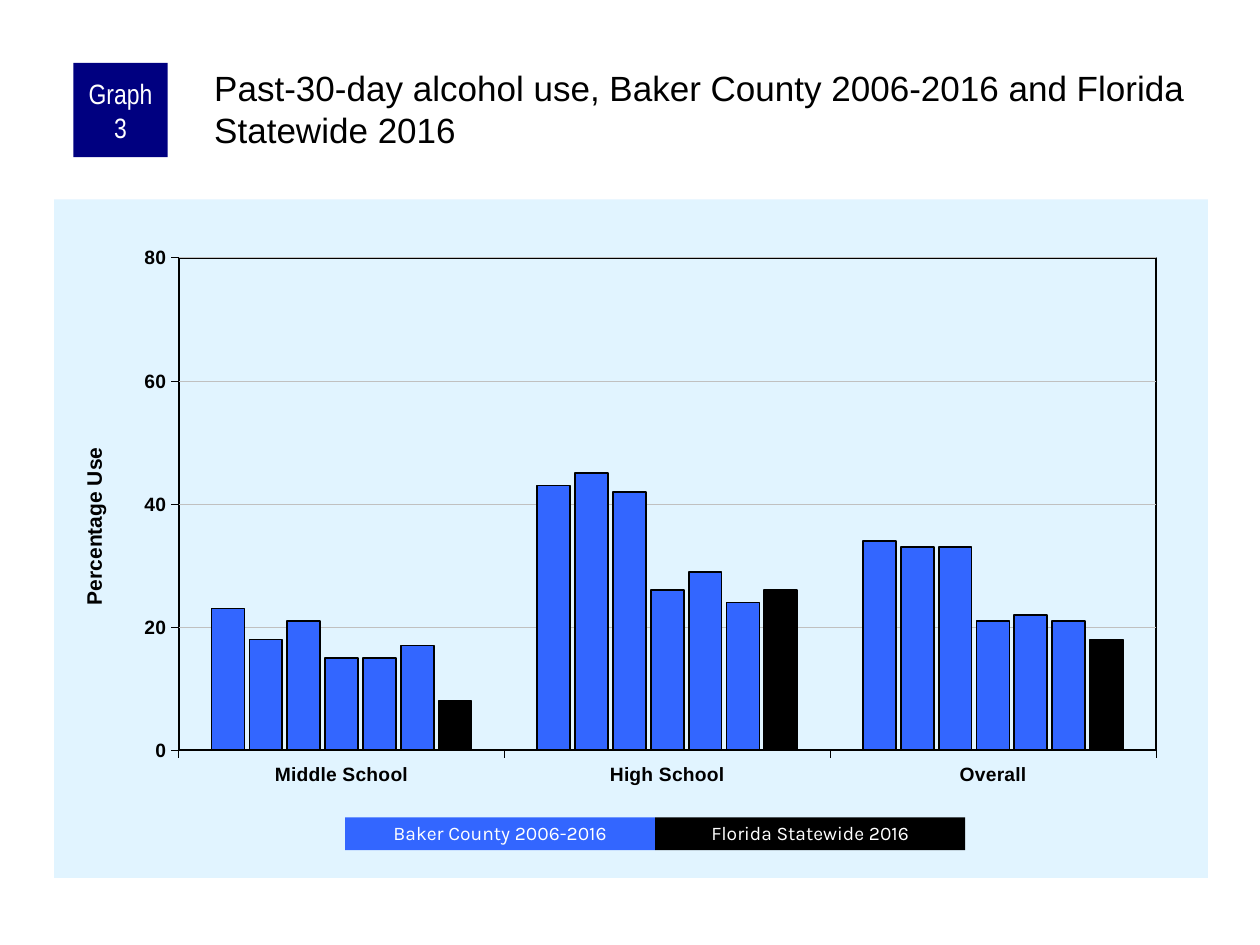
import pptx
import pptx.chart.data
import pptx.dml.color
import pptx.enum.chart
import pptx.enum.shapes
import pptx.enum.text
import pptx.oxml
import pptx.oxml.ns
import pptx.util
from pptx.util import Cm, Pt

BLACK = pptx.dml.color.RGBColor(0x00, 0x00, 0x00)
WHITE = pptx.dml.color.RGBColor(0xFF, 0xFF, 0xFF)
NAVY = pptx.dml.color.RGBColor(0x00, 0x00, 0x80)
BLUE = pptx.dml.color.RGBColor(0x33, 0x66, 0xFF)
PALE_BLUE = pptx.dml.color.RGBColor(0xE1, 0xF4, 0xFF)
GRAY = pptx.dml.color.RGBColor(0xC0, 0xC0, 0xC0)

TITLE = "Past-30-day alcohol use, Baker County 2006-2016 and Florida Statewide 2016"
BADGE = "Graph 3"
AXIS_TITLE = "Percentage Use"
CATEGORIES = ["Middle School", "High School", "Overall"]
SERIES = [
    ("Series 1", (23, 43, 34), BLUE),
    ("Series 2", (18, 45, 33), BLUE),
    ("Series 3", (21, 42, 33), BLUE),
    ("Series 4", (15, 26, 21), BLUE),
    ("Series 5", (15, 29, 22), BLUE),
    ("Series 6", (17, 24, 21), BLUE),
    ("Series 7", (8, 26, 18), BLACK),
]
LEGEND = [("Baker County 2006-2016", BLUE), ("Florida Statewide 2016", BLACK)]
LEGEND_LEFT, LEGEND_TOP, LEGEND_WIDTH, LEGEND_HEIGHT = 6.96, 16.48, 6.25, 0.66

CHART_NAMESPACE = pptx.oxml.ns.nsdecls("c", "a")


def add_text(paragraph, text, size, font_name, color):
    run = paragraph.add_run()
    run.text = text
    run.font.size = Pt(size)
    run.font.name = font_name
    run.font.color.rgb = color


def add_box(slide, position, text, size, font_name, fill, insets):
    shape = slide.shapes.add_shape(
        pptx.enum.shapes.MSO_SHAPE.RECTANGLE, *map(Cm, position))
    shape.shadow.inherit = False
    shape.fill.solid()
    shape.fill.fore_color.rgb = fill
    shape.line.fill.background()
    frame = shape.text_frame
    frame.word_wrap = True
    frame.vertical_anchor = pptx.enum.text.MSO_ANCHOR.MIDDLE
    frame.margin_left = frame.margin_right = Cm(insets[0])
    frame.margin_top = frame.margin_bottom = Cm(insets[1])
    paragraph = frame.paragraphs[0]
    paragraph.alignment = pptx.enum.text.PP_ALIGN.CENTER
    add_text(paragraph, text, size, font_name, WHITE)
    return paragraph


def set_layout(parent, index, values, target=""):
    for layout in parent.findall(pptx.oxml.ns.qn("c:layout")):
        parent.remove(layout)
    parts = [f'<c:layoutTarget val="{target}"/>'] if target else []
    parts += [f'<c:{name}Mode val="edge"/>' for name in "xy"]
    parts += [f'<c:{name} val="{value}"/>' for name, value in zip("xywh", values)]
    parent.insert(index, pptx.oxml.parse_xml(
        f'<c:layout {CHART_NAMESPACE}><c:manualLayout>{"".join(parts)}'
        '</c:manualLayout></c:layout>'))


def area_format(fill, line):
    return pptx.oxml.parse_xml(
        f'<c:spPr {CHART_NAMESPACE}>{fill}{line}</c:spPr>')


def style_line(line, color, width):
    line.color.rgb = color
    line.width = Pt(width)


def add_usage_chart(slide):
    data = pptx.chart.data.CategoryChartData()
    data.categories = CATEGORIES
    for name, values, color in SERIES:
        data.add_series(name, values)
    chart = slide.shapes.add_chart(
        pptx.enum.chart.XL_CHART_TYPE.COLUMN_CLUSTERED,
        Cm(1.09), Cm(4.02), Cm(23.26), Cm(13.68), data).chart
    chart.has_title = False
    chart.has_legend = False
    chart.font.name = "Arial"
    chart.font.size = Pt(8)
    chart.font.color.rgb = BLACK

    plot = chart.plots[0]
    plot.gap_width = 200
    plot.overlap = -15
    plot.vary_by_categories = False
    for series, (name, values, color) in zip(plot.series, SERIES):
        series.format.fill.solid()
        series.format.fill.fore_color.rgb = color
        style_line(series.format.line, BLACK, 1)

    for axis in (chart.category_axis, chart.value_axis):
        axis.major_tick_mark = pptx.enum.chart.XL_TICK_MARK.OUTSIDE
        axis.minor_tick_mark = pptx.enum.chart.XL_TICK_MARK.NONE
        style_line(axis.format.line, BLACK, 0.25)
        font = axis.tick_labels.font
        font.name = "Arial"
        font.size = Pt(11)
        font.bold = True
        font.color.rgb = BLACK

    value_axis = chart.value_axis
    value_axis.minimum_scale = 0
    value_axis.maximum_scale = 80
    value_axis.major_unit = 20
    value_axis.has_major_gridlines = True
    style_line(value_axis.major_gridlines.format.line, GRAY, 0.25)
    paragraph = value_axis.axis_title.text_frame.paragraphs[0]
    paragraph.font.bold = True
    add_text(paragraph, AXIS_TITLE, 12, "Arial", BLACK)
    paragraph.runs[0].font.bold = True
    value_axis.axis_title.text_frame._txBody.bodyPr.set("rot", "-5400000")
    set_layout(value_axis.axis_title._element, 1, (0.02, 0.36))

    chart_xml = chart._chartSpace.chart
    plot_area = chart_xml.plotArea
    set_layout(plot_area, 0, (0.108, 0.086, 0.847, 0.726), "inner")
    plot_area.append(area_format(
        "<a:noFill/>",
        f'<a:ln w="{Pt(1)}"><a:solidFill><a:srgbClr val="{BLACK}"/></a:solidFill></a:ln>'))
    chart_xml.addnext(area_format(
        f'<a:solidFill><a:srgbClr val="{PALE_BLUE}"/></a:solidFill>',
        "<a:ln><a:noFill/></a:ln>"))


def main():
    presentation = pptx.Presentation()
    presentation.slide_width = Cm(25.4)
    presentation.slide_height = Cm(19.05)
    slide = presentation.slides.add_slide(presentation.slide_layouts[6])

    add_usage_chart(slide)
    add_box(slide, (1.48, 1.27, 1.9, 1.9), BADGE, 16, "Arial Narrow", NAVY, (0.13, 0))

    frame = slide.shapes.add_textbox(Cm(4.24), Cm(1.27), Cm(20.12), Cm(2.11)).text_frame
    frame.word_wrap = True
    frame.margin_left = frame.margin_top = Cm(0.08)
    frame.margin_right = frame.margin_bottom = 0
    add_text(frame.paragraphs[0], TITLE, 20, "Arial", BLACK)

    for index, (text, color) in enumerate(LEGEND):
        position = (LEGEND_LEFT + index * LEGEND_WIDTH, LEGEND_TOP,
                    LEGEND_WIDTH, LEGEND_HEIGHT)
        paragraph = add_box(slide, position, text, 11, "Karla", color, (0.25, 0.13))
        paragraph.line_spacing = 0.9

    presentation.save("out.pptx")


if __name__ == "__main__":
    main()
